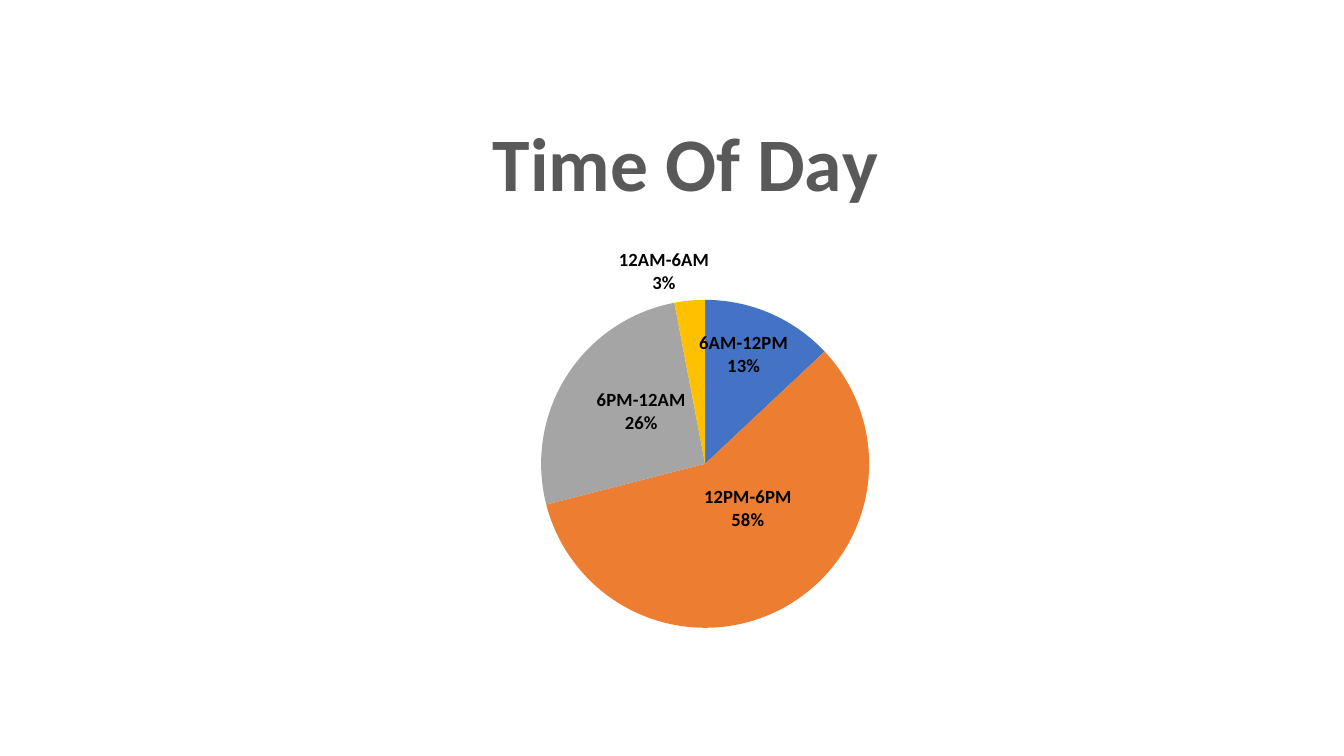
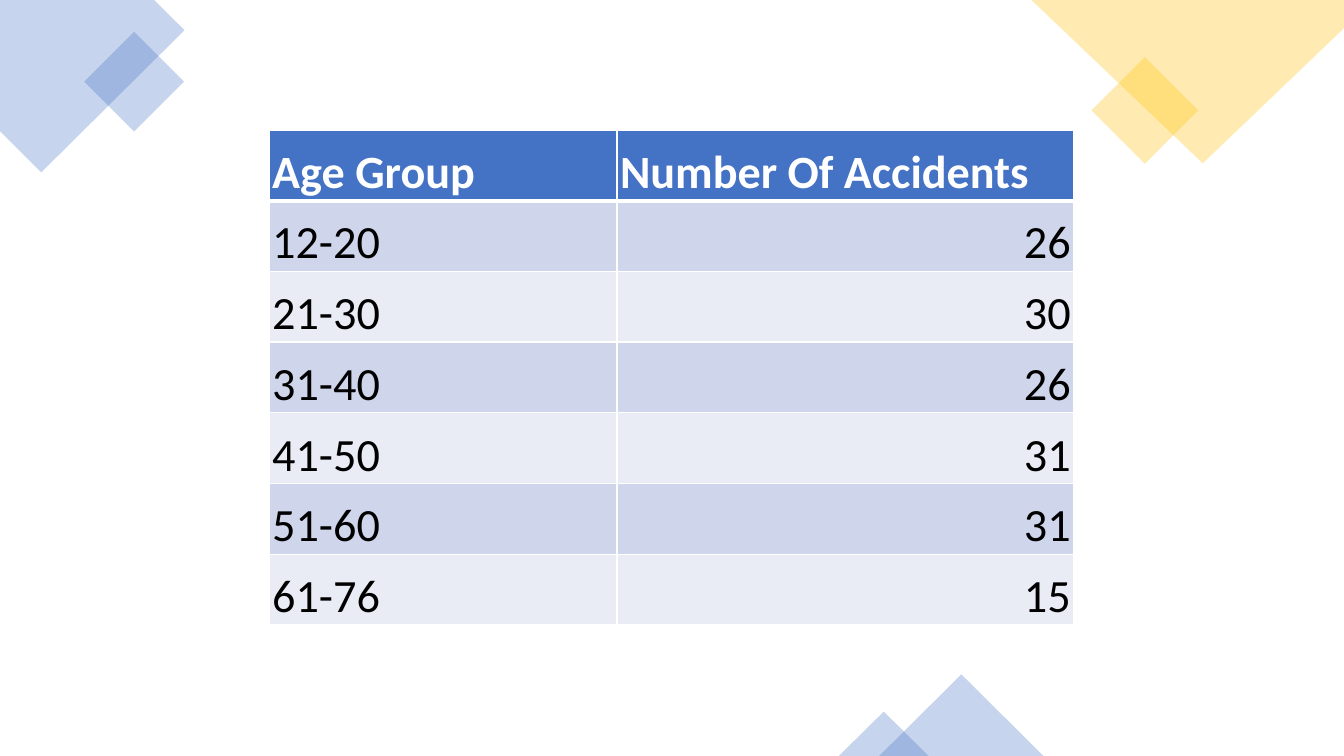
"""Build two slides: accidents by time of day and by age group."""
import pptx
import pptx.chart.data
import pptx.dml.color
import pptx.enum.chart
import pptx.enum.shapes
import pptx.enum.text
import pptx.oxml.ns
import pptx.util
from lxml import etree

Inches = pptx.util.Inches
Pt = pptx.util.Pt
RGBColor = pptx.dml.color.RGBColor
Position = pptx.enum.chart.XL_LABEL_POSITION
Shape = pptx.enum.shapes.MSO_SHAPE
Align = pptx.enum.text.PP_ALIGN
qn = pptx.oxml.ns.qn

FONT = "Calibri"
BLUE = RGBColor(0x44, 0x72, 0xC4)
ORANGE = RGBColor(0xED, 0x7D, 0x31)
GRAY = RGBColor(0xA5, 0xA5, 0xA5)
GOLD = RGBColor(0xFF, 0xC0, 0x00)
TITLE_GRAY = RGBColor(0x59, 0x59, 0x59)
BLACK = RGBColor(0, 0, 0)
WHITE = RGBColor(0xFF, 0xFF, 0xFF)
BAND_DARK = RGBColor(0xCF, 0xD5, 0xEA)
BAND_LIGHT = RGBColor(0xE9, 0xEB, 0xF5)

TIMES = [
    ("6AM-12PM", 13, BLUE, Position.CENTER, (0.55, -5.7)),
    ("12PM-6PM", 58, ORANGE, Position.CENTER, (0.3, -4.5)),
    ("6PM-12AM", 26, GRAY, Position.CENTER, (0.5, -1.3)),
    ("12AM-6AM", 3, GOLD, Position.OUTSIDE_END, (1.85, 0)),
]
AGES = [
    ("Age Group", "Number Of Accidents"),
    ("12-20", "26"),
    ("21-30", "30"),
    ("31-40", "26"),
    ("41-50", "31"),
    ("51-60", "31"),
    ("61-76", "15"),
]


def style_font(font, size, color, bold):
    """Apply the shared typeface with a size, colour and weight."""
    font.name = FONT
    font.size = Pt(size)
    font.color.rgb = color
    font.bold = bold


def set_layout(parent, index, modes, **percentages):
    """Give a chart part a manual layout in percent of the chart."""
    for layout in parent.findall(qn("c:layout")):
        parent.remove(layout)
    layout = etree.Element(qn("c:layout"))
    manual = etree.SubElement(layout, qn("c:manualLayout"))
    for name, value in modes.items():
        etree.SubElement(manual, qn(f"c:{name}")).set("val", value)
    for name, value in percentages.items():
        etree.SubElement(manual, qn(f"c:{name}")).set("val", f"{value / 100:.4f}")
    parent.insert(index, layout)


def label_slice(series, index, position, offset):
    """Label one slice with its category and percentage."""
    label = series.points[index].data_label
    style_font(label.font, 13.3, BLACK, True)
    label.position = position
    element = series._element.findall(".//" + qn("c:dLbl"))[index]
    for name, shown in (("showVal", 0), ("showCatName", 1), ("showPercent", 1)):
        element.find(qn(f"c:{name}")).set("val", str(shown))
    etree.SubElement(element, qn("c:separator")).text = "\n"
    set_layout(element, 1, {}, x=offset[0], y=offset[1])


def add_time_chart(slide):
    """Add the pie chart of times of day."""
    data = pptx.chart.data.CategoryChartData(number_format="0")
    data.categories = [time[0] for time in TIMES]
    data.add_series("Series 1", [time[1] for time in TIMES])
    chart = slide.shapes.add_chart(
        pptx.enum.chart.XL_CHART_TYPE.PIE,
        Inches(1.4), Inches(0.79), Inches(10.81), Inches(5.97), data,
    ).chart
    style_font(chart.font, 10, BLACK, False)
    chart.has_legend = False
    chart.has_title = True
    title = chart.chart_title
    title.text_frame.text = "Time Of Day"
    style_font(title.text_frame.paragraphs[0].runs[0].font, 54, TITLE_GRAY, True)
    edges = {"xMode": "edge", "yMode": "edge"}
    set_layout(title._element, 1, edges, x=31, y=2.85)
    plot_area = chart._chartSpace.find(".//" + qn("c:plotArea"))
    set_layout(plot_area, 0, {"layoutTarget": "inner", **edges},
               x=36.7, y=36.6, w=30.1, h=54.5)
    chart.plots[0].vary_by_categories = True
    series = chart.plots[0].series[0]
    for index, (_, _, color, position, offset) in enumerate(TIMES):
        fill = series.points[index].format.fill
        fill.solid()
        fill.fore_color.rgb = color
        label_slice(series, index, position, offset)
    for leader_lines in series._element.iter(qn("c:showLeaderLines")):
        leader_lines.set("val", "0")


def tint(shape, color):
    """Fill a decoration at 30% opacity without outline or shadow."""
    shape.shadow.inherit = False
    shape.line.fill.background()
    shape.fill.solid()
    shape.fill.fore_color.rgb = color
    color_element = shape._element.spPr.find(".//" + qn("a:srgbClr"))
    etree.SubElement(color_element, qn("a:alpha")).set("val", "30000")


def add_polygon(slide, points, color):
    """Add a tinted polygon through points given in inches."""
    corners = [(Inches(x), Inches(y)) for x, y in points]
    builder = slide.shapes.build_freeform(*corners[0])
    builder.add_line_segments(corners[1:], close=True)
    tint(builder.convert_to_shape(), color)


def add_decoration(slide, kind, left, top, width, height, color, rotation=0):
    """Add a tinted preset shape."""
    shape = slide.shapes.add_shape(
        kind, Inches(left), Inches(top), Inches(width), Inches(height))
    shape.rotation = rotation
    tint(shape, color)


def add_decorations(slide):
    """Add the corner and edge decorations."""
    add_polygon(slide, [(1.53, 0), (0, 0), (0, 1.3), (0.41, 1.71), (1.83, 0.3)], BLUE)
    add_decoration(slide, Shape.RECTANGLE, 0.98, 0.46, 0.7, 0.7, BLUE, 315)
    add_decoration(slide, Shape.RECTANGLE, 10.98, 0.72, 0.75, 0.75, GOLD, 315)
    add_polygon(slide, [(13.33, 0), (10.23, 0), (11.93, 1.62), (13.33, 0.28)], GOLD)
    add_decoration(slide, Shape.ISOSCELES_TRIANGLE, 8.72, 6.69, 1.63, 0.81, BLUE)
    add_decoration(slide, Shape.ISOSCELES_TRIANGLE, 8.32, 7.06, 0.89, 0.44, BLUE)


def set_borders(cell, top, bottom):
    """Draw white cell borders, 1 point wide at the sides."""
    properties = cell._tc.get_or_add_tcPr()
    widths = (("lnL", 1), ("lnR", 1), ("lnT", top), ("lnB", bottom))
    for index, (name, width) in enumerate(widths):
        line = etree.Element(qn(f"a:{name}"), w=str(Pt(width)))
        fill = etree.SubElement(line, qn("a:solidFill"))
        etree.SubElement(fill, qn("a:srgbClr")).set("val", str(WHITE))
        properties.insert(index, line)


def fill_cell(cell, text, fill, color, bold, alignment):
    """Write and format one table cell."""
    cell.margin_left = cell.margin_right = cell.margin_top = Inches(0.03)
    cell.margin_bottom = 0
    cell.vertical_anchor = pptx.enum.text.MSO_ANCHOR.BOTTOM
    cell.fill.solid()
    cell.fill.fore_color.rgb = fill
    cell.text_frame.text = text
    paragraph = cell.text_frame.paragraphs[0]
    paragraph.alignment = alignment
    style_font(paragraph.runs[0].font, 33, color, bold)


def add_age_table(slide):
    """Add the table of accidents by age group."""
    table = slide.shapes.add_table(
        len(AGES), 2, Inches(2.67), Inches(1.29), Inches(7.98), Inches(4.91)).table
    for column, width in zip(table.columns, (3.45, 4.53)):
        column.width = Inches(width)
    for row, texts in enumerate(AGES):
        header = row == 0
        band = BAND_DARK if row % 2 else BAND_LIGHT
        for column, text in enumerate(texts):
            cell = table.cell(row, column)
            alignment = Align.RIGHT if column and not header else Align.LEFT
            fill_cell(cell, text, BLUE if header else band,
                      WHITE if header else BLACK, header, alignment)
            set_borders(cell, 3 if row == 1 else 1, 3 if header else 1)


def main():
    """Build and save the presentation."""
    presentation = pptx.Presentation()
    presentation.slide_width = Inches(13.33)
    presentation.slide_height = Inches(7.5)
    blank = presentation.slide_layouts[6]
    add_time_chart(presentation.slides.add_slide(blank))
    age_slide = presentation.slides.add_slide(blank)
    add_decorations(age_slide)
    add_age_table(age_slide)
    presentation.save("out.pptx")


if __name__ == "__main__":
    main()
